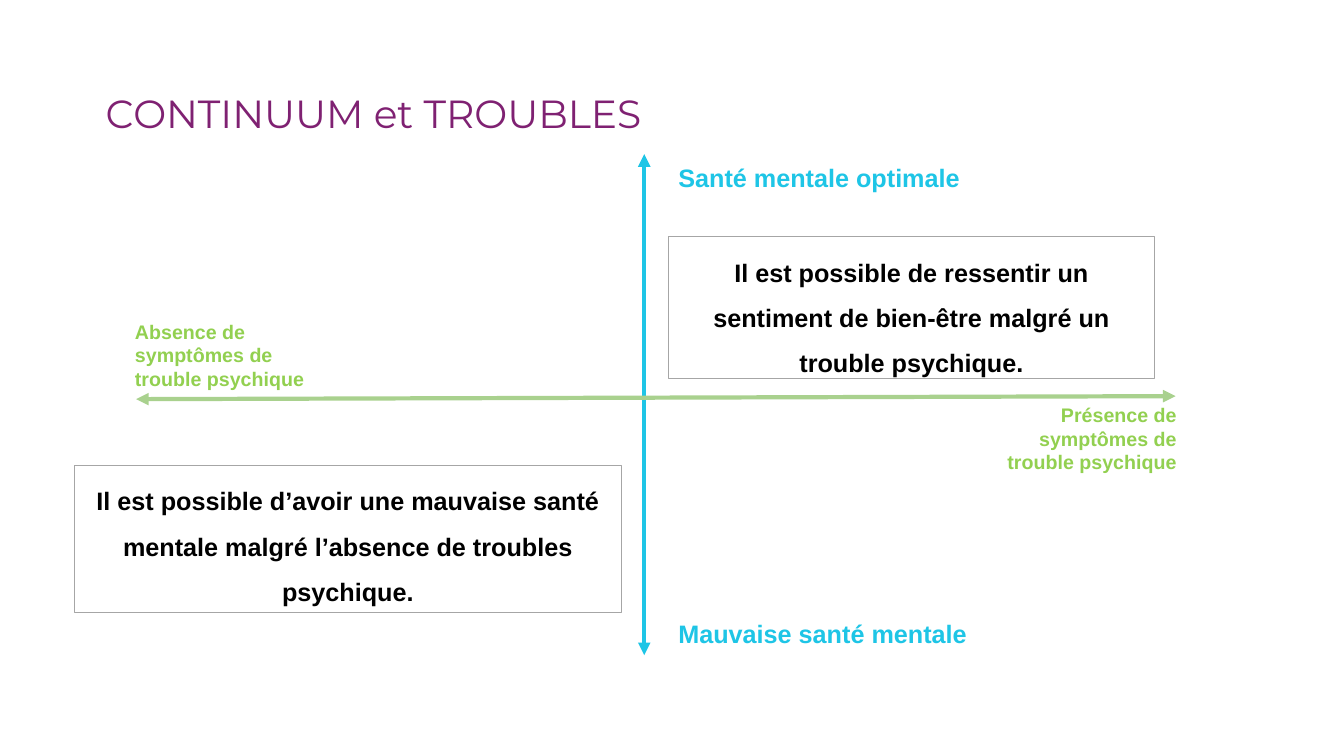
from lxml import etree
from pptx import Presentation
from pptx.dml.color import RGBColor
from pptx.enum.shapes import MSO_CONNECTOR, MSO_SHAPE
from pptx.enum.text import MSO_ANCHOR, PP_ALIGN
from pptx.oxml.ns import qn
from pptx.util import Inches, Pt

STRAIGHT = MSO_CONNECTOR.STRAIGHT
RECTANGLE = MSO_SHAPE.RECTANGLE
TOP = MSO_ANCHOR.TOP
LEFT, CENTER, RIGHT = PP_ALIGN.LEFT, PP_ALIGN.CENTER, PP_ALIGN.RIGHT

COLORS = {
    "title": "7F2172",
    "health": "1EC5E6",
    "symptoms": "92D050",
    "symptom_axis": "A9D18E",
    "statement": "000000",
    "border": "A6A6A6",
}
STYLES = {
    "title": {"name": "Montserrat", "size": Pt(28), "bold": False},
    "health": {"name": "Arial", "size": Pt(18), "bold": True},
    "symptoms": {"name": "Arial", "size": Pt(14), "bold": True},
    "statement": {"name": "Arial", "size": Pt(18), "bold": True},
}
AXES = [
    ("health", (6.39, 1.53), (6.39, 6.5)),
    ("symptom_axis", (11.66, 3.93), (1.35, 3.96)),
]
LABELS = [
    ("Santé mentale optimale", "health", LEFT, (6.63, 1.56, 5.14, 0.32)),
    ("Mauvaise santé mentale", "health", LEFT, (6.63, 6.08, 5.14, 0.32)),
    ("Absence de symptômes de trouble psychique", "symptoms", LEFT, (1.24, 3.12, 1.91, 0.81)),
    ("Présence de symptômes de trouble psychique", "symptoms", RIGHT, (9.86, 3.95, 1.91, 0.8)),
    ("CONTINUUM et TROUBLES", "title", LEFT, (0.95, 0.84, 10.42, 0.57)),
]
STATEMENTS = [
    ("Il est possible d’avoir une mauvaise santé mentale malgré l’absence de troubles psychique.",
     (0.74, 4.62, 5.42, 1.46)),
    ("Il est possible de ressentir un sentiment de bien-être malgré un trouble psychique.",
     (6.63, 2.35, 4.82, 1.41)),
]


def color(key):
    """Return the named colour."""
    return RGBColor.from_string(COLORS[key])


def write_text(shape, text, style, alignment, line_spacing=1.0):
    """Fill a shape with one styled paragraph."""
    frame = shape.text_frame
    frame.word_wrap = True
    frame.vertical_anchor = TOP
    paragraph = frame.paragraphs[0]
    paragraph.alignment = alignment
    paragraph.line_spacing = line_spacing
    run = paragraph.add_run()
    run.text = text
    for attribute, value in STYLES[style].items():
        setattr(run.font, attribute, value)
    run.font.color.rgb = color(style)


def add_axis(slide, key, start, end):
    """Draw a line with an arrowhead at each end."""
    axis = slide.shapes.add_connector(STRAIGHT, *map(Inches, start + end))
    axis.line.width = Pt(3)
    axis.line.color.rgb = color(key)
    properties = axis.line._get_or_add_ln()
    for arrowhead in ("a:headEnd", "a:tailEnd"):
        etree.SubElement(properties, qn(arrowhead), type="triangle")
    etree.SubElement(properties.getparent(), qn("a:effectLst"))


def add_statement(slide, text, box):
    """Draw a bordered statement."""
    shape = slide.shapes.add_shape(RECTANGLE, *map(Inches, box))
    shape.shadow.inherit = False
    shape.fill.background()
    shape.line.color.rgb = color("border")
    shape.line.width = Pt(0.75)
    write_text(shape, text, "statement", CENTER, 1.5)


def main():
    """Build the mental health continuum slide."""
    presentation = Presentation()
    presentation.slide_width = Inches(13.33)
    presentation.slide_height = Inches(7.5)
    slide = presentation.slides.add_slide(presentation.slide_layouts[6])
    for key, start, end in AXES:
        add_axis(slide, key, start, end)
    for text, style, alignment, box in LABELS:
        label = slide.shapes.add_textbox(*map(Inches, box))
        write_text(label, text, style, alignment)
    for text, box in STATEMENTS:
        add_statement(slide, text, box)
    presentation.save("out.pptx")


if __name__ == "__main__":
    main()
